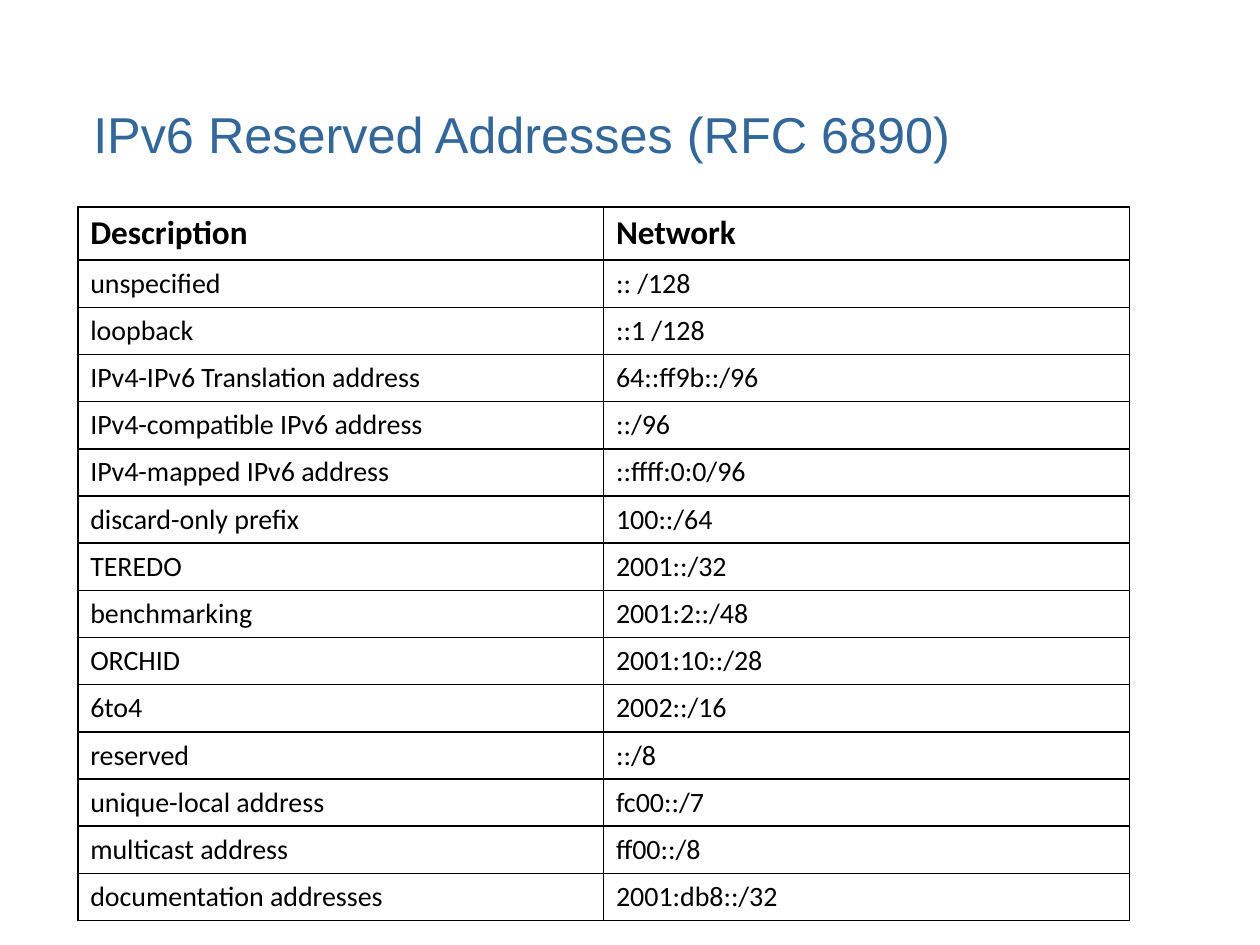
from dataclasses import dataclass

from lxml import etree
from pptx import Presentation
from pptx.dml.color import RGBColor
from pptx.enum import text
from pptx.oxml.ns import qn
from pptx.util import Cm, Pt

TITLE = "IPv6 Reserved Addresses (RFC 6890)"
HEADER = ("Description", "Network")
ADDRESSES = [
    ("unspecified", ":: /128"),
    ("loopback", "::1 /128"),
    ("IPv4-IPv6 Translation address", "64::ff9b::/96"),
    ("IPv4-compatible IPv6 address", "::/96"),
    ("IPv4-mapped IPv6 address", "::ffff:0:0/96"),
    ("discard-only prefix", "100::/64"),
    ("TEREDO", "2001::/32"),
    ("benchmarking", "2001:2::/48"),
    ("ORCHID", "2001:10::/28"),
    ("6to4", "2002::/16"),
    ("reserved", "::/8"),
    ("unique-local address", "fc00::/7"),
    ("multicast address", "ff00::/8"),
    ("documentation addresses", "2001:db8::/32"),
]


@dataclass(frozen=True)
class Theme:
    title_font: str = "Arial"
    table_font: str = "Calibri"
    title_color: str = "336699"
    ink: str = "000000"
    title_size: float = 28.8
    header_size: float = 19
    body_size: float = 16
    border: float = 1


THEME = Theme()
TABLE_LEFT, TABLE_TOP = Cm(1.57), Cm(4.17)
COLUMN_WIDTH = Cm(10.6)
HEADER_HEIGHT, ROW_HEIGHT = Cm(1.07), Cm(0.94)
HANGING_INDENT = Cm(0.97)


def add_span(para, words, font, size, color, bold=False):
    span = para.add_run()
    span.text = words
    span.font.name = font
    span.font.size = Pt(size)
    span.font.bold = bold
    span.font.color.rgb = RGBColor.from_string(color)


def add_borders(cell):
    properties = cell._tc.get_or_add_tcPr()
    for side in ("lnL", "lnR", "lnT", "lnB"):
        line = etree.SubElement(properties, qn(f"a:{side}"), w=str(Pt(THEME.border)))
        fill = etree.SubElement(line, qn("a:solidFill"))
        etree.SubElement(fill, qn("a:srgbClr"), val=THEME.ink)


def add_title(page):
    box = page.shapes.title
    box.left, box.top, box.width, box.height = Cm(1.63), Cm(2.39), Cm(22.38), Cm(1.8)
    frame = box.text_frame
    frame.word_wrap = True
    frame.auto_size = text.MSO_AUTO_SIZE.NONE
    frame.vertical_anchor = text.MSO_ANCHOR.MIDDLE
    frame.margin_left = frame.margin_right = Cm(0.25)
    frame.margin_top, frame.margin_bottom = Cm(0), Cm(1.04)
    para = frame.paragraphs[0]
    para.alignment = text.PP_ALIGN.LEFT
    para.line_spacing = 0.9
    add_span(para, TITLE, THEME.title_font, THEME.title_size, THEME.title_color)


def fill_cell(cell, words, is_header):
    add_borders(cell)
    cell.fill.background()
    cell.margin_left = cell.margin_right = Cm(0.25)
    cell.margin_top = cell.margin_bottom = Cm(0.13)
    para = cell.text_frame.paragraphs[0]
    indents = para._p.get_or_add_pPr()
    indents.set("marL", str(HANGING_INDENT))
    indents.set("indent", str(-HANGING_INDENT))
    size = THEME.header_size if is_header else THEME.body_size
    add_span(para, words, THEME.table_font, size, THEME.ink, is_header)


def add_address_table(page):
    rows = [HEADER, *ADDRESSES]
    table = page.shapes.add_table(
        len(rows), len(HEADER), TABLE_LEFT, TABLE_TOP,
        COLUMN_WIDTH * len(HEADER), HEADER_HEIGHT + ROW_HEIGHT * len(ADDRESSES),
    ).table
    table.first_row = table.horz_banding = False
    for column in table.columns:
        column.width = COLUMN_WIDTH
    for r, row in enumerate(rows):
        table.rows[r].height = ROW_HEIGHT if r else HEADER_HEIGHT
        for c, words in enumerate(row):
            fill_cell(table.cell(r, c), words, r == 0)


def main():
    deck = Presentation()
    deck.slide_width, deck.slide_height = Cm(25.4), Cm(19.05)
    page = deck.slides.add_slide(deck.slide_layouts.get_by_name("Title Only"))
    add_title(page)
    add_address_table(page)
    deck.save("out.pptx")


if __name__ == "__main__":
    main()
